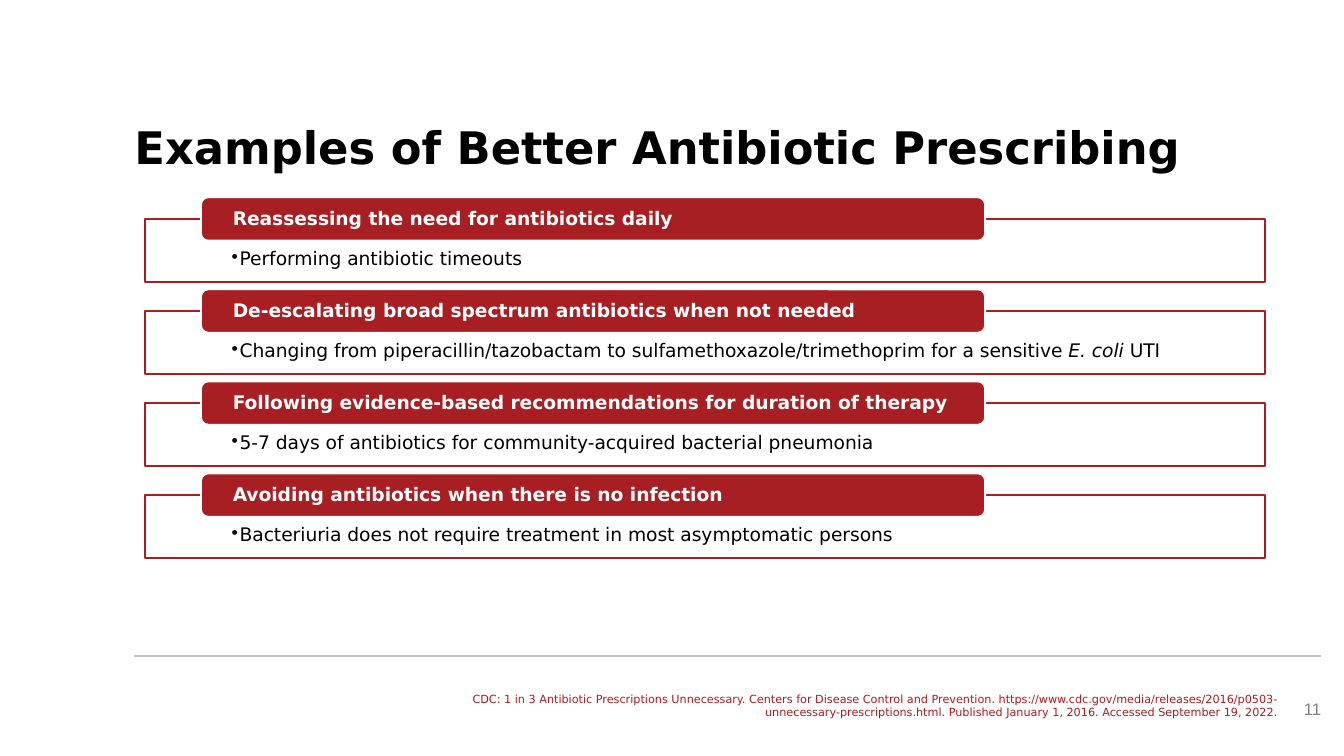
from lxml.etree import SubElement
from pptx import Presentation
from pptx.dml.color import RGBColor as RGB
from pptx.enum.shapes import MSO_CONNECTOR as CONN, MSO_SHAPE as SHAPE
from pptx.enum.text import MSO_ANCHOR as ANCHOR, PP_ALIGN as ALIGN
from pptx.oxml.ns import qn
from pptx.util import Cm, Pt

COLORS = {"red": "A71E23", "white": "FFFFFF", "black": "000000",
          "rule": "C0C0C0", "number": "828383"}
FONT = "DejaVu Sans"
PRACTICES = [
    ("Reassessing the need for antibiotics daily",
     [("Performing antibiotic timeouts", False)]),
    ("De-escalating broad spectrum antibiotics when not needed",
     [("Changing from piperacillin/tazobactam to sulfamethoxazole/trimethoprim"
       " for a sensitive ", False), ("E. coli ", True), ("UTI", False)]),
    ("Following evidence-based recommendations for duration of therapy",
     [("5-7 days of antibiotics for community-acquired bacterial pneumonia", False)]),
    ("Avoiding antibiotics when there is no infection",
     [("Bacteriuria does not require treatment in most asymptomatic persons", False)]),
]
CITATION = ("CDC: 1 in 3 Antibiotic Prescriptions Unnecessary. Centers for Disease "
            "Control and Prevention. https://www.cdc.gov/media/releases/2016/"
            "p0503-unnecessary-prescriptions.html. Published January 1, 2016. "
            "Accessed September 19, 2022.")


def color(name):
    """Return the named colour."""
    return RGB.from_string(COLORS[name])


def write(sp, runs, size, ink, insets=(0, 0, 0, 0), font=FONT, bold=False,
          anchor=ANCHOR.MIDDLE, align=ALIGN.LEFT, spacing=None, bullet=False):
    """Write one formatted paragraph of (text, italic) runs into a shape."""
    tf = sp.text_frame
    frame = {"word_wrap": True, "vertical_anchor": anchor}
    frame.update(zip(("margin_left", "margin_top", "margin_right", "margin_bottom"),
                     map(Cm, insets)))
    for name, value in frame.items():
        setattr(tf, name, value)
    p = tf.paragraphs[0]
    if bullet:
        pPr = p._p.get_or_add_pPr()
        pPr.set("marL", str(Cm(0.15)))
        pPr.set("indent", str(Cm(-0.15)))
        SubElement(pPr, qn("a:buChar")).set("char", "•")
    p.alignment, p.line_spacing = align, spacing
    for text, italic in runs:
        r = p.add_run()
        r.text = text
        style = {"name": font, "size": Pt(size), "bold": bold, "italic": italic}
        for name, value in style.items():
            setattr(r.font, name, value)
        r.font.color.rgb = color(ink)


def add_panel(s, kind, box, fill, line):
    """Add a flat filled shape with a thin outline."""
    sp = s.shapes.add_shape(kind, *map(Cm, box))
    sp.shadow.inherit = False
    sp.fill.solid()
    sp.fill.fore_color.rgb = color(fill)
    sp.line.color.rgb = color(line)
    sp.line.width = Pt(1)
    return sp


def add_title(s, box):
    """Place the title at the foot of its box."""
    sp = s.shapes.title
    sp.left, sp.top, sp.width, sp.height = map(Cm, box)
    write(sp, [("Examples of Better Antibiotic Prescribing", False)], 24, "black",
          insets=(0, 0, 0, 0.48), bold=True, anchor=ANCHOR.BOTTOM, spacing=Pt(33))


def add_practice(s, box, heading, detail):
    """Add an outlined detail with its heading across the top edge."""
    x, y, w, h = box
    sp = add_panel(s, SHAPE.RECTANGLE, box, "white", "red")
    fill = sp.fill._xPr.find(qn("a:solidFill"))
    SubElement(fill[0], qn("a:alpha")).set("val", "90000")
    write(sp, detail, 10, "black", insets=(1.64, 0.58, 1.64, 0.2),
          anchor=ANCHOR.TOP, spacing=0.9, bullet=True)
    sp = add_panel(s, SHAPE.ROUNDED_RECTANGLE,
                   (x + w * 0.05, y - 0.41, w * 0.7, 0.82), "red", "white")
    write(sp, [(heading, False)], 10, "white", insets=(0.56, 0, 0.56, 0),
          bold=True, spacing=0.9)


def add_practices(s, box):
    """Stack the practices evenly in the box."""
    x, y, w, h = box
    row, height = 1.74, h - 1.74 * (len(PRACTICES) - 1)
    for i, (heading, detail) in enumerate(PRACTICES):
        add_practice(s, (x, y + i * row, w, height), heading, detail)


def add_footer(s, box):
    """Add the rule, the citation and the slide number."""
    x, y, w, h = box
    rule = s.shapes.add_connector(CONN.STRAIGHT, Cm(x), Cm(y), Cm(x + w), Cm(y))
    rule.line.color.rgb = color("rule")
    rule.line.width = Pt(1)
    SubElement(rule._element.spPr, qn("a:effectLst"))
    right = x + w
    for left, top, width, text, size, ink, font in (
            (right - 16.08, y + 0.56, 15.24, CITATION, 6, "red", FONT),
            (right - 0.64, y + 0.61, 0.64, "11", 9, "number", "Arial")):
        sp = s.shapes.add_textbox(Cm(left), Cm(top), Cm(width), Cm(h - 0.61))
        write(sp, [(text, False)], size, ink, font=font, align=ALIGN.RIGHT)


def main():
    """Build and save the slide."""
    prs = Presentation()
    prs.slide_width, prs.slide_height = Cm(25.4), Cm(14.29)
    s = prs.slides.add_slide(prs.slide_layouts[5])
    add_title(s, (2.54, 0.94, 21.59, 2.82))
    add_practices(s, (2.74, 4.14, 21.17, 6.41))
    add_footer(s, (2.54, 12.4, 22.43, 1.37))
    prs.save("out.pptx")


if __name__ == "__main__":
    main()
